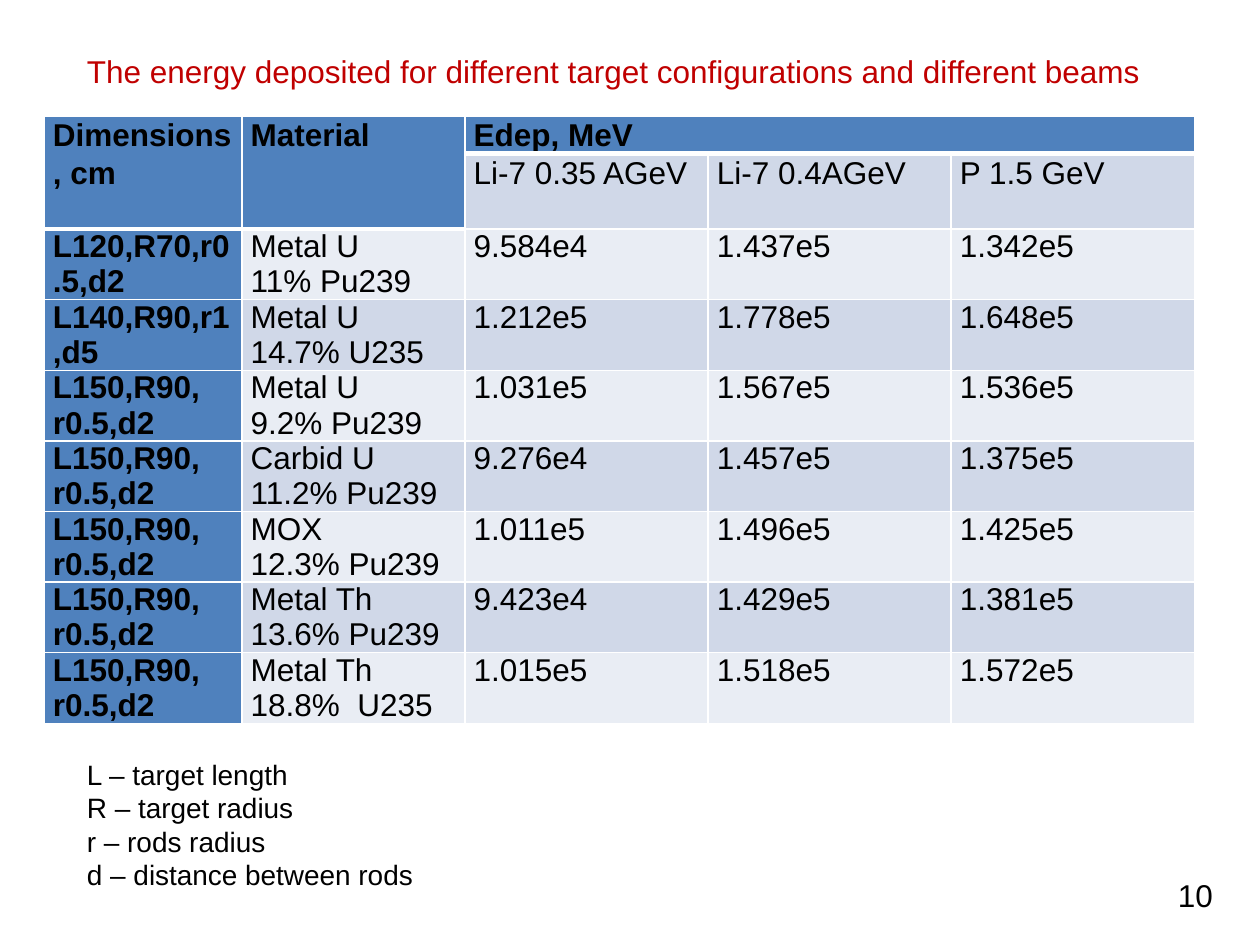
import pptx
import pptx.util
import pptx.dml.color
import pptx.enum.text
import pptx.oxml.ns
from lxml import etree

Inches, Pt = pptx.util.Inches, pptx.util.Pt
RGB = pptx.dml.color.RGBColor.from_string
qn = pptx.oxml.ns.qn

COLORS = {"title": "C00000", "text": "000000", "head": "4F81BD",
          "band": "D0D8E8", "light": "E9EDF4", "border": "FFFFFF"}
FONT = "Arial"

TITLE = "The energy deposited for different target configurations and different beams"
PAGE = "10"
LEGEND = ["L – target length", "R – target radius", "r – rods radius",
          "d – distance between rods"]
ROD = ["L150,R90,", "r0.5,d2"]
ROWS = [
    ("Dimensions, cm", "Material", "Edep, MeV", "", ""),
    ("", "", "Li-7 0.35 AGeV", "Li-7 0.4AGeV", "P 1.5 GeV"),
    ("L120,R70,r0.5,d2", ["Metal U", "11% Pu239"], "9.584e4", "1.437e5", "1.342e5"),
    ("L140,R90,r1,d5", ["Metal U", "14.7% U235"], "1.212e5", "1.778e5", "1.648e5"),
    (ROD, ["Metal U", "9.2% Pu239"], "1.031e5", "1.567e5", "1.536e5"),
    (ROD, ["Carbid U", "11.2% Pu239"], "9.276e4", "1.457e5", "1.375e5"),
    (ROD, ["MOX", "12.3% Pu239"], "1.011e5", "1.496e5", "1.425e5"),
    (ROD, ["Metal Th", "13.6% Pu239"], "9.423e4", "1.429e5", "1.381e5"),
    (ROD, ["Metal Th", "18.8%  U235"], "1.015e5", "1.518e5", "1.572e5"),
]
HEAD_ROWS = 2
COL_WIDTHS = [1.57, 1.77] + [1.93] * 3
ROW_HEIGHTS = [0.26] * HEAD_ROWS + [0.49] * (len(ROWS) - HEAD_ROWS)
TABLE_BOX = (0.35, 0.92, 9.13, 4.84)


def write(tf, text, size=18, color="text", bold=False, spacing=1.0):
    lines = [text] if isinstance(text, str) else text
    for i, line in enumerate(lines):
        p = tf.paragraphs[0] if i == 0 else tf.add_paragraph()
        p.alignment = pptx.enum.text.PP_ALIGN.LEFT
        p.line_spacing = spacing
        p.space_before = p.space_after = Pt(0)
        r = p.add_run()
        r.text = line
        r.font.name, r.font.size, r.font.bold = FONT, Pt(size), bold
        r.font.color.rgb = RGB(COLORS[color])


def place(sp, left, top, width, height):
    sp.left, sp.top, sp.width, sp.height = map(Inches, (left, top, width, height))
    tf = sp.text_frame
    tf.word_wrap = True
    tf.auto_size = pptx.enum.text.MSO_AUTO_SIZE.NONE
    tf.vertical_anchor = pptx.enum.text.MSO_ANCHOR.TOP
    return tf


def remove_bullets(tf):
    for p in tf.paragraphs:
        pPr = p._p.get_or_add_pPr()
        pPr.set("marL", "0")
        pPr.set("indent", "0")
        etree.SubElement(pPr, qn("a:buNone"))


def set_borders(cell, bottom):
    tcPr = cell._tc.get_or_add_tcPr()
    for i, (side, width) in enumerate([("L", 1), ("R", 1), ("T", 1), ("B", bottom)]):
        ln = etree.Element(qn("a:ln" + side), w=str(Pt(width)))
        fill = etree.SubElement(ln, qn("a:solidFill"))
        etree.SubElement(fill, qn("a:srgbClr"), val=COLORS["border"])
        tcPr.insert(i, ln)


def add_energy_table(slide):
    frame = slide.shapes.add_table(len(ROWS), len(COL_WIDTHS), *map(Inches, TABLE_BOX))
    table = frame.table
    for col, width in zip(table.columns, COL_WIDTHS):
        col.width = Inches(width)
    for row, height in zip(table.rows, ROW_HEIGHTS):
        row.height = Inches(height)
    frame.height = Inches(TABLE_BOX[3])
    table.cell(0, 0).merge(table.cell(1, 0))
    table.cell(0, 1).merge(table.cell(1, 1))
    table.cell(0, 2).merge(table.cell(0, 4))

    for i, row in enumerate(ROWS):
        for j, text in enumerate(row):
            cell = table.cell(i, j)
            is_top = i == 0 or (i < HEAD_ROWS and j < 2)
            is_head = is_top or j == 0
            cell.margin_left = cell.margin_right = Inches(0.07)
            cell.margin_top = cell.margin_bottom = 0
            cell.fill.solid()
            shade = "head" if is_head else "band" if i % 2 else "light"
            cell.fill.fore_color.rgb = RGB(COLORS[shade])
            set_borders(cell, bottom=3 if is_top else 1)
            if text:
                write(cell.text_frame, text, bold=is_head,
                      spacing=1.07 if i < HEAD_ROWS else 1.0)


def main():
    prs = pptx.Presentation()
    prs.slide_width, prs.slide_height = Inches(10), Inches(7.5)
    slide = prs.slides.add_slide(prs.slide_layouts[1])
    title, legend = slide.placeholders

    write(place(title, 0.59, 0.36, 9.06, 0.4), TITLE, color="title")
    page = slide.shapes.add_textbox(0, 0, 0, 0)
    write(place(page, 9.25, 6.9, 0.55, 0.4), PAGE)
    add_energy_table(slide)

    tf = place(legend, 0.59, 5.96, 6.06, 1.18)
    write(tf, LEGEND, size=16)
    remove_bullets(tf)
    slide.shapes.element.append(legend.element)  # legend in front of the table

    prs.save("out.pptx")


if __name__ == "__main__":
    main()
